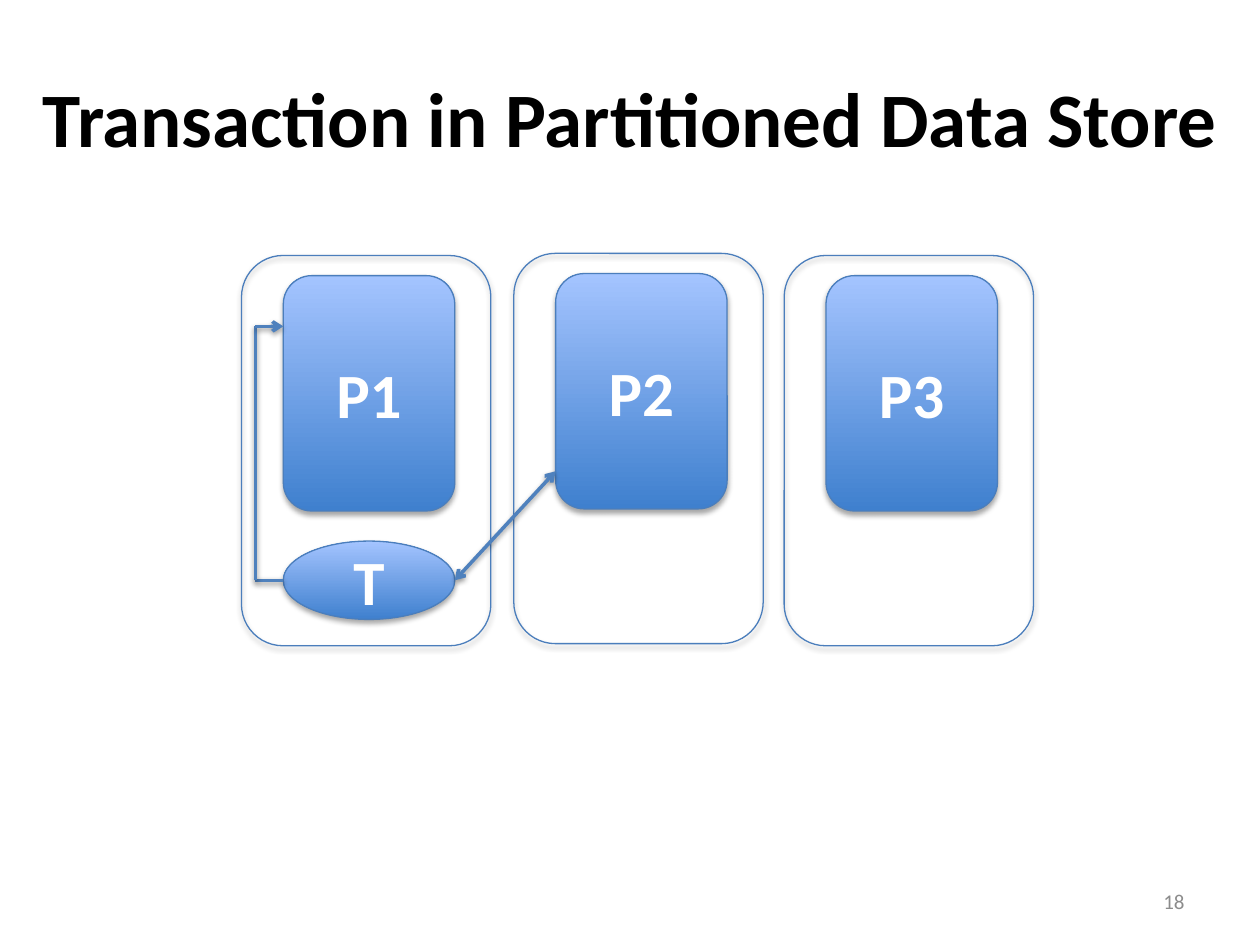
from dataclasses import dataclass
from typing import Optional

from lxml.etree import SubElement
from pptx import Presentation
from pptx.dml.color import RGBColor
from pptx.enum.shapes import MSO_CONNECTOR as Connector, MSO_SHAPE as Preset
from pptx.enum.text import MSO_ANCHOR as Anchor, MSO_AUTO_SIZE as AutoSize, PP_ALIGN as Align
from pptx.oxml.ns import qn
from pptx.util import Pt


@dataclass(frozen=True)
class Theme:
    font: str = "Calibri"
    title_size: float = 44
    label_size: float = 36
    number_size: float = 12
    title_color: str = "000000"
    label_color: str = "FFFFFF"
    number_color: str = "8C8C8C"
    gradient_bottom: str = "3F80CE"
    gradient_top: str = "A4C4FF"
    outline: str = "4B7EBC"
    arrow: str = "4F81BD"
    shadow: str = "000000"


@dataclass(frozen=True)
class Box:
    left: float
    top: float
    width: float
    height: float

    @property
    def right(self) -> float:
        return self.left + self.width

    @property
    def middle(self) -> float:
        return self.top + self.height / 2

    def lengths(self) -> tuple:
        return Pt(self.left), Pt(self.top), Pt(self.width), Pt(self.height)


@dataclass(frozen=True)
class Node:
    """One machine: an outer frame holding a data partition."""
    label: str
    left: float
    top: float

    @property
    def frame(self) -> Box:
        return Box(self.left, self.top, 142.5, 223)

    @property
    def partition(self) -> Box:
        return Box(self.left + 23.9, self.top + 11.5, 98, 134.5)


@dataclass(frozen=True)
class Link:
    start: tuple
    end: tuple
    start_arrow: bool = False
    end_arrow: bool = False


THEME = Theme()


def write(shape, text: str, size: float, color: str, align: Align, bold: bool = False) -> None:
    frame = shape.text_frame
    frame.word_wrap = True
    frame.auto_size = AutoSize.NONE
    frame.vertical_anchor = Anchor.MIDDLE
    paragraph = frame.paragraphs[0]
    paragraph.alignment = align
    run = paragraph.add_run()
    run.text = text
    run.font.name = THEME.font
    run.font.size = Pt(size)
    run.font.bold = bold
    run.font.color.rgb = RGBColor.from_string(color)


def add_shadow(shape, distance: float, opacity: int) -> None:
    effects = SubElement(shape._element.spPr, qn("a:effectLst"))
    shadow = SubElement(effects, qn("a:outerShdw"), blurRad=str(Pt(3.1)),
                        dist=str(Pt(distance)), dir="5400000", rotWithShape="0")
    color = SubElement(shadow, qn("a:srgbClr"), val=THEME.shadow)
    SubElement(color, qn("a:alpha"), val=str(opacity * 1000))


def add_block(slide, preset: Preset, box: Box, label: Optional[str] = None) -> None:
    """Draw a gradient block with a label, or an unfilled frame without one."""
    shape = slide.shapes.add_shape(preset, *box.lengths())
    if label is None:
        shape.fill.background()
    else:
        shape.fill.gradient()
        shape.fill.gradient_angle = 90
        colors = (THEME.gradient_bottom, THEME.gradient_top)
        for stop, position, color in zip(shape.fill.gradient_stops, (0, 1), colors):
            stop.position = position
            stop.color.rgb = RGBColor.from_string(color)
        write(shape, label, THEME.label_size, THEME.label_color, Align.CENTER, bold=True)
    shape.line.color.rgb = RGBColor.from_string(THEME.outline)
    shape.line.width = Pt(0.75)
    add_shadow(shape, distance=1.8, opacity=35)


def add_link(slide, link: Link) -> None:
    points = [Pt(value) for value in (*link.start, *link.end)]
    connector = slide.shapes.add_connector(Connector.STRAIGHT, *points)
    connector.line.color.rgb = RGBColor.from_string(THEME.arrow)
    connector.line.width = Pt(2)
    line = connector._element.spPr.find(qn("a:ln"))
    for tag, wanted in (("a:headEnd", link.start_arrow), ("a:tailEnd", link.end_arrow)):
        if wanted:
            SubElement(line, qn(tag), type="arrow")
    add_shadow(connector, distance=1.6, opacity=38)


def main() -> None:
    presentation = Presentation()
    presentation.slide_width, presentation.slide_height = Pt(720), Pt(540)
    slide = presentation.slides.add_slide(presentation.slide_layouts[5])

    # Title
    title = slide.shapes.title
    title.left, title.top, title.width, title.height = Box(11.5, 21.6, 697.7, 90).lengths()
    write(title, "Transaction in Partitioned Data Store", THEME.title_size,
          THEME.title_color, Align.CENTER, bold=True)

    # Nodes with their partitions
    nodes = [Node("P1", 138, 146), Node("P2", 293.6, 144.8), Node("P3", 448.1, 146)]
    for node in nodes:
        add_block(slide, Preset.ROUNDED_RECTANGLE, node.partition, node.label)
        add_block(slide, Preset.ROUNDED_RECTANGLE, node.frame)

    # Transaction running on the first node
    local, remote = nodes[0].partition, nodes[1].partition
    transaction = Box(local.left, 309.2, local.width, 44.8)
    add_block(slide, Preset.OVAL, transaction, "T")

    # Local access around the left side, remote access to the second node
    lane = local.left - 16
    entry = local.top + 29
    links = [
        Link((transaction.left, transaction.middle), (lane, transaction.middle)),
        Link((lane, transaction.middle), (lane, entry)),
        Link((lane, entry), (local.left, entry), end_arrow=True),
        Link((transaction.right, transaction.middle), (remote.left, remote.top + 113),
             start_arrow=True, end_arrow=True),
    ]
    for link in links:
        add_link(slide, link)

    # Slide number
    number = slide.shapes.add_textbox(*Box(516, 500.5, 168, 28.75).lengths())
    write(number, "18", THEME.number_size, THEME.number_color, Align.RIGHT)

    presentation.save("out.pptx")


if __name__ == "__main__":
    main()
